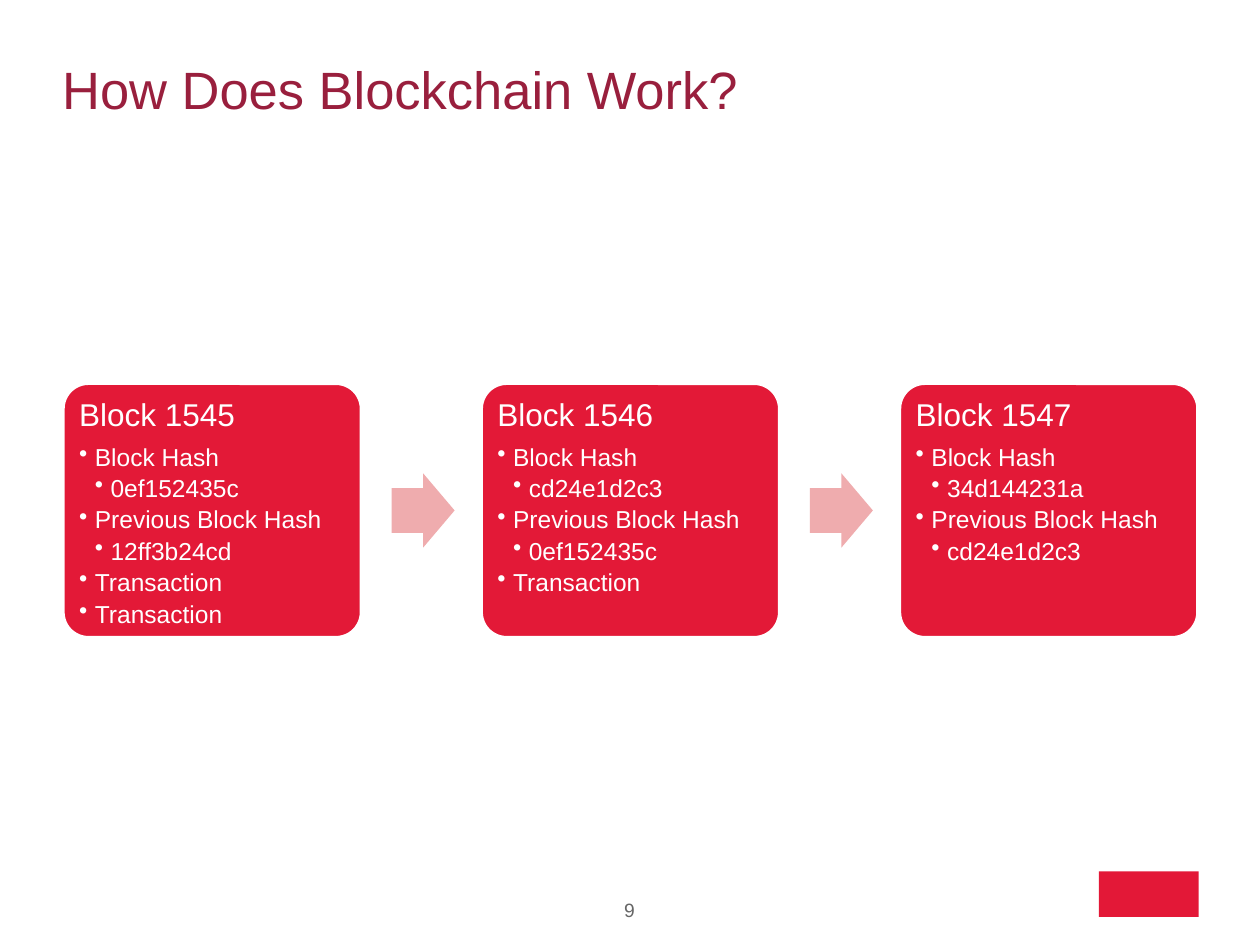
from lxml.etree import SubElement
from pptx import Presentation
from pptx.dml.color import RGBColor
from pptx.enum.shapes import MSO_SHAPE as Preset
from pptx.enum.text import MSO_ANCHOR as Anchor, PP_ALIGN as Align
from pptx.oxml.ns import qn
from pptx.util import Pt

RED = "E31937"
FONT = "Arial"
BLOCK_LEFT, BLOCK_TOP, BLOCK_WIDTH, BLOCK_HEIGHT = 36, 219, 170.6, 145.4
BLOCK_PITCH = 239
ARROW_OFFSET, ARROW_WIDTH, ARROW_HEIGHT = 187.8, 36, 42.5
INDENT = 9

# Number, block hash, previous block hash, count of transactions
BLOCKS = [
    ("1545", "0ef152435c", "12ff3b24cd", 2),
    ("1546", "cd24e1d2c3", "0ef152435c", 1),
    ("1547", "34d144231a", "cd24e1d2c3", 0),
]


def color(hex_code):
    return RGBColor.from_string(hex_code)


def set_insets(frame, inset):
    frame.margin_left = frame.margin_right = Pt(inset)
    frame.margin_top = frame.margin_bottom = Pt(inset)


def format_runs(paragraph, size, hex_code):
    for run in paragraph.runs:
        run.font.name = FONT
        run.font.size = Pt(size)
        run.font.color.rgb = color(hex_code)


def add_filled(slide, preset, left, top, width, height, fill):
    shape = slide.shapes.add_shape(preset, Pt(left), Pt(top), Pt(width), Pt(height))
    shape.shadow.inherit = False
    shape.fill.solid()
    shape.fill.fore_color.rgb = color(fill)
    shape.line.fill.background()
    return shape


def add_bullet(paragraph, level):
    paragraph.level = level
    properties = paragraph._p.get_or_add_pPr()
    properties.set("marL", str(Pt(INDENT * level)))
    properties.set("indent", str(-Pt(INDENT)))
    SubElement(properties, qn("a:buChar"), char="•")


def add_block(slide, left, number, block_hash, previous_hash, transactions):
    block = add_filled(slide, Preset.ROUNDED_RECTANGLE, left, BLOCK_TOP,
                       BLOCK_WIDTH, BLOCK_HEIGHT, RED)
    block.adjustments[0] = 0.1
    block.line.color.rgb = color("FFFFFF")
    block.line.width = Pt(2)
    frame = block.text_frame
    frame.word_wrap = True
    frame.vertical_anchor = Anchor.TOP
    set_insets(frame, 5)

    lines = [
        (f"Block {number}", 0),
        ("Block Hash", 1), (block_hash, 2),
        ("Previous Block Hash", 1), (previous_hash, 2),
    ] + [("Transaction", 1)] * transactions
    frame.text = "\n".join(text for text, _ in lines)
    for paragraph, (_, level) in zip(frame.paragraphs, lines):
        if level:
            add_bullet(paragraph, level)
        paragraph.alignment = Align.LEFT
        paragraph.line_spacing = 0.9
        paragraph.space_after = Pt(2.8 if level else 6.5)
        format_runs(paragraph, 14 if level else 18, "FFFFFF")


def add_arrow(slide, left):
    top = BLOCK_TOP + (BLOCK_HEIGHT - ARROW_HEIGHT) / 2
    arrow = add_filled(slide, Preset.RIGHT_ARROW, left, top,
                       ARROW_WIDTH, ARROW_HEIGHT, "EFACAE")
    arrow.adjustments[0] = 0.6
    arrow.adjustments[1] = 0.5


def set_title(slide, text):
    title = slide.shapes.title
    title.left, title.top, title.width, title.height = Pt(35.5), Pt(14.5), Pt(649), Pt(72.5)
    frame = title.text_frame
    frame.text = text
    frame.vertical_anchor = Anchor.MIDDLE
    set_insets(frame, 0)
    frame.paragraphs[0].alignment = Align.LEFT
    format_runs(frame.paragraphs[0], 30, "991F3D")


def add_page_number(slide, number):
    frame = slide.shapes.add_textbox(Pt(329), Pt(513.5), Pt(61.5), Pt(18.5)).text_frame
    frame.text = number
    frame.word_wrap = False
    set_insets(frame, 0)
    frame.paragraphs[0].alignment = Align.CENTER
    format_runs(frame.paragraphs[0], 11, "666666")


def main():
    deck = Presentation()
    deck.slide_width, deck.slide_height = Pt(720), Pt(540)
    slide = deck.slides.add_slide(deck.slide_layouts[5])

    set_title(slide, "How Does Blockchain Work?")
    for position, block in enumerate(BLOCKS):
        left = BLOCK_LEFT + position * BLOCK_PITCH
        add_block(slide, left, *block)
        if position < len(BLOCKS) - 1:
            add_arrow(slide, left + ARROW_OFFSET)
    add_page_number(slide, "9")
    add_filled(slide, Preset.RECTANGLE, 628, 498, 57, 26, "E31837")

    deck.save("out.pptx")


if __name__ == "__main__":
    main()
